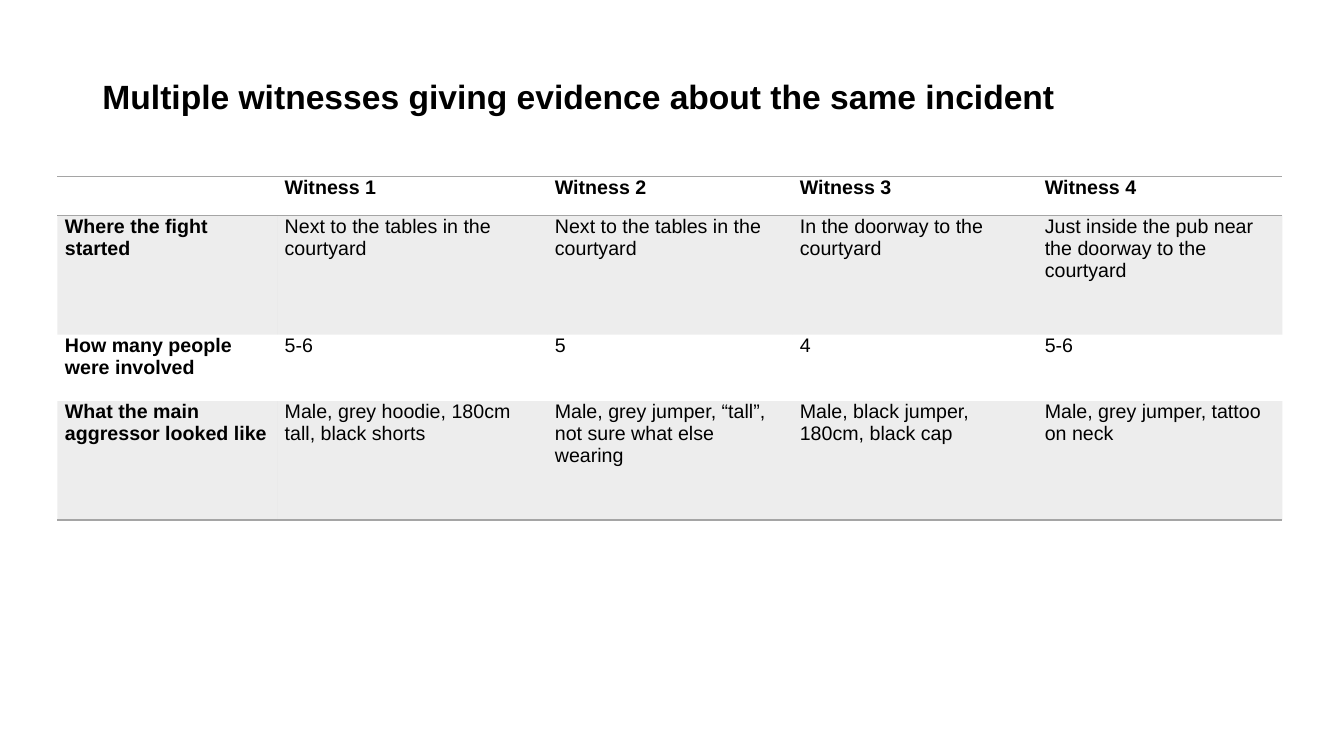
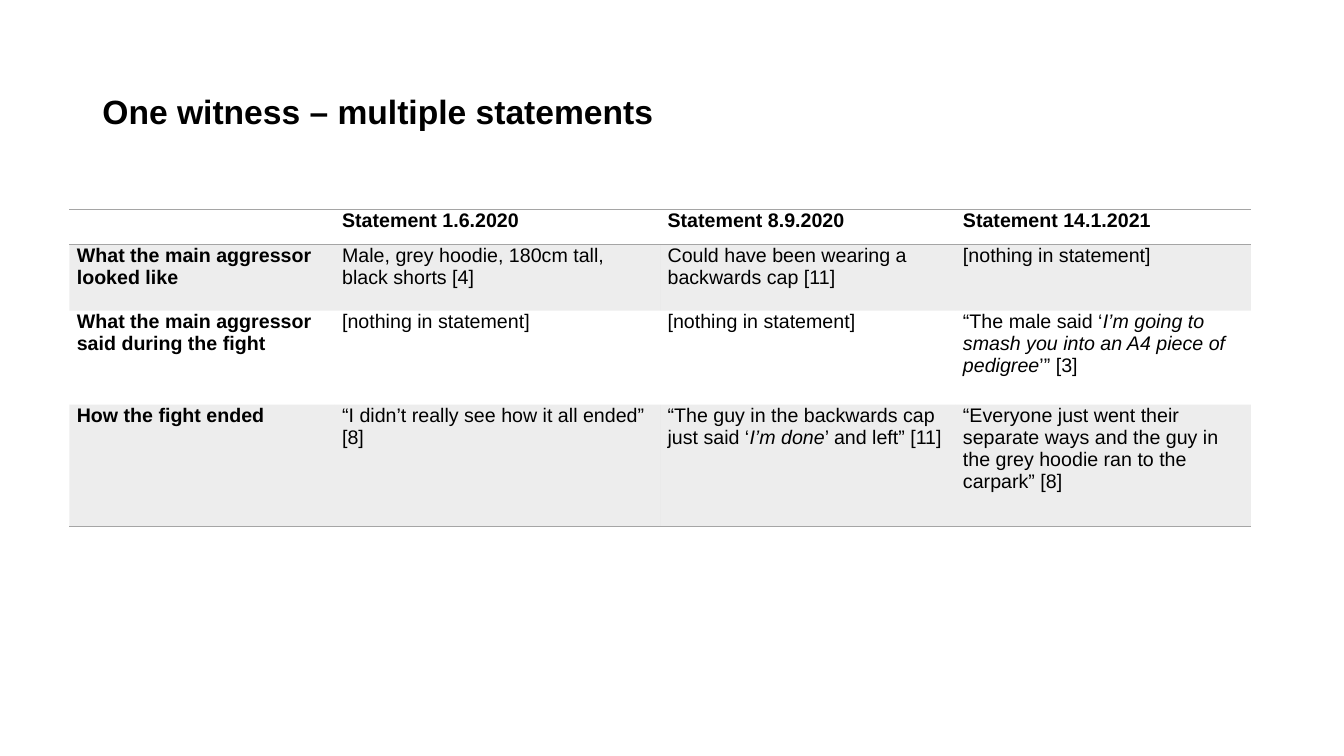
from lxml import etree
from pptx import Presentation
from pptx.dml.color import RGBColor
from pptx.enum.text import MSO_ANCHOR, MSO_AUTO_SIZE, PP_ALIGN
from pptx.oxml.ns import qn
from pptx.util import Pt

FONT = "Arial"
BLACK, GREY = "000000", "A5A5A5"
TITLE_SIZE, CELL_SIZE = 24, 14
BAND_OPACITY = 20
TITLE_ONLY = 5
PLAIN_TABLE_STYLE = "{2D5ABB26-0587-4C30-8999-92F81FD0307C}"
CELL_FORMAT = {
    "margin_left": Pt(5.4), "margin_right": Pt(5.4),
    "margin_top": 0, "margin_bottom": 0,
    "vertical_anchor": MSO_ANCHOR.TOP,
}
TITLE_FORMAT = {
    "word_wrap": True,
    "auto_size": MSO_AUTO_SIZE.NONE,
    "vertical_anchor": MSO_ANCHOR.MIDDLE,
}

# Boxes are left, top, width, height; *asterisks* enclose italic words.
SLIDES = [
    {
        "title": "Multiple witnesses giving evidence about the same incident",
        "title_box": (66, 29, 811, 83),
        "table_origin": (41, 126),
        "widths": [157, 193, 175, 175, 175],
        "heights": [28, 85, 47.5, 85],
        "rows": [
            ["", "Witness 1", "Witness 2", "Witness 3", "Witness 4"],
            ["Where the fight started",
             "Next to the tables in the courtyard",
             "Next to the tables in the courtyard",
             "In the doorway to the courtyard",
             "Just inside the pub near the doorway to the courtyard"],
            ["How many people were involved", "5-6", "5", "4", "5-6"],
            ["What the main aggressor looked like",
             "Male, grey hoodie, 180cm tall, black shorts",
             "Male, grey jumper, “tall”, not sure what else wearing",
             "Male, black jumper, 180cm, black cap",
             "Male, grey jumper, tattoo on neck"],
        ],
    },
    {
        "title": "One witness – multiple statements",
        "title_box": (66, 29, 828, 104),
        "table_origin": (49.5, 149.5),
        "widths": [189.5, 232.5, 211, 211],
        "heights": [25, 47.5, 67, 87],
        "rows": [
            ["", "Statement 1.6.2020", "Statement 8.9.2020",
             "Statement 14.1.2021"],
            ["What the main aggressor looked like",
             "Male, grey hoodie, 180cm tall, black shorts [4]",
             "Could have been wearing a backwards cap [11]",
             "[nothing in statement]"],
            ["What the main aggressor said during the fight",
             "[nothing in statement]",
             "[nothing in statement]",
             "“The male said ‘*I’m going to smash you into an A4 piece of "
             "pedigree*’” [3]"],
            ["How the fight ended",
             "“I didn’t really see how it all ended” [8]",
             "“The guy in the backwards cap just said ‘*I’m done*’ and left” "
             "[11]",
             "“Everyone just went their separate ways and the guy in the grey "
             "hoodie ran to the carpark” [8]"],
        ],
    },
]


def set_color(target, color):
    target.rgb = RGBColor.from_string(color)


def set_attributes(target, values):
    for name, value in values.items():
        setattr(target, name, value)


def write_text(paragraph, text, size, bold):
    """Add text as runs, with the parts between asterisks in italics."""
    for index, part in enumerate(text.split("*")):
        if part:
            font = paragraph.add_run().font
            paragraph.runs[-1].text = part
            set_attributes(font, {"name": FONT, "size": Pt(size),
                                  "bold": bold, "italic": index % 2 == 1})
            set_color(font.color, BLACK)


def add_title(slide, text, box):
    title = slide.shapes.title
    title.left, title.top, title.width, title.height = map(Pt, box)
    set_attributes(title.text_frame, TITLE_FORMAT)
    paragraph = title.text_frame.paragraphs[0]
    set_attributes(paragraph, {"alignment": PP_ALIGN.LEFT,
                               "line_spacing": 0.9})
    write_text(paragraph, text, TITLE_SIZE, True)


def fill_band(cell):
    cell.fill.solid()
    set_color(cell.fill.fore_color, GREY)
    color = next(cell._tc.tcPr.iter(qn("a:srgbClr")))
    etree.SubElement(color, qn("a:alpha"), val=str(BAND_OPACITY * 1000))


def add_rules(cell, sides):
    """Draw cell borders; their elements must precede the fill."""
    for index, side in enumerate(sides):
        line = etree.Element(qn(f"a:ln{side}"), w=str(Pt(1)))
        fill = etree.SubElement(line, qn("a:solidFill"))
        etree.SubElement(fill, qn("a:srgbClr"), val=GREY)
        cell._tc.tcPr.insert(index, line)


def add_evidence_table(slide, origin, widths, heights, rows):
    left, top = origin
    frame = slide.shapes.add_table(
        len(rows), len(widths), Pt(left), Pt(top),
        Pt(sum(widths)), Pt(sum(heights)))
    table = frame.table
    set_attributes(table, {"first_row": False, "horz_banding": False})
    table._tbl.tblPr.find(qn("a:tableStyleId")).text = PLAIN_TABLE_STYLE
    for column, width in zip(table.columns, widths):
        column.width = Pt(width)
    for row, height in zip(table.rows, heights):
        row.height = Pt(height)

    rules = {0: "TB", len(rows) - 1: "B"}
    for row_index, texts in enumerate(rows):
        for column_index, text in enumerate(texts):
            cell = table.cell(row_index, column_index)
            set_attributes(cell, CELL_FORMAT)
            is_heading = row_index == 0 or column_index == 0
            write_text(cell.text_frame.paragraphs[0], text,
                       CELL_SIZE, is_heading)
            if row_index % 2:
                fill_band(cell)
            else:
                cell.fill.background()
            add_rules(cell, rules.get(row_index, ""))


def main():
    presentation = Presentation()
    presentation.slide_width, presentation.slide_height = Pt(960), Pt(540)
    for content in SLIDES:
        slide = presentation.slides.add_slide(
            presentation.slide_layouts[TITLE_ONLY])
        add_title(slide, content["title"], content["title_box"])
        add_evidence_table(slide, content["table_origin"], content["widths"],
                           content["heights"], content["rows"])
    presentation.save("out.pptx")


if __name__ == "__main__":
    main()
